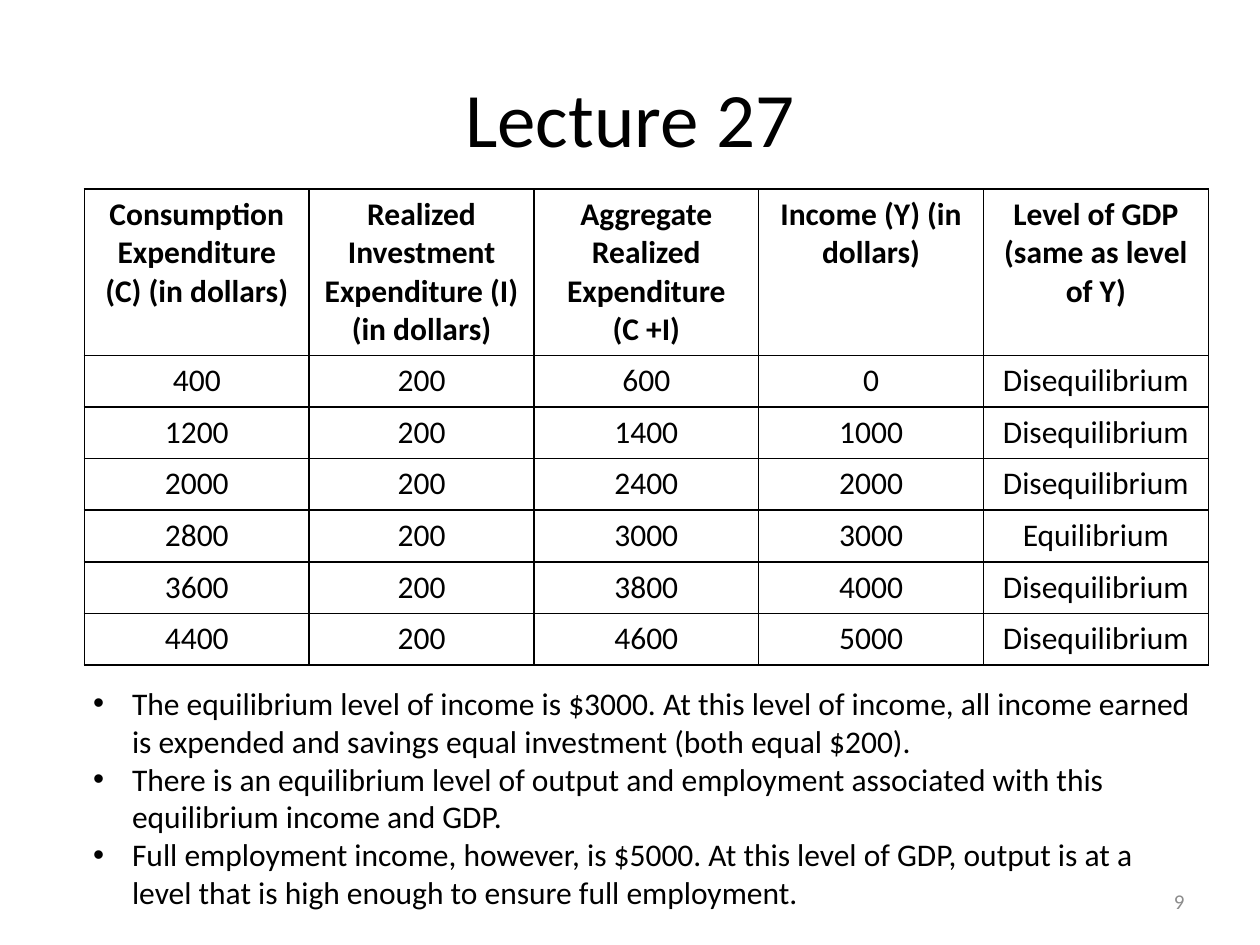
from lxml import etree
from pptx import Presentation
from pptx.dml.color import RGBColor
from pptx.enum.text import MSO_ANCHOR, PP_ALIGN
from pptx.oxml.ns import qn
from pptx.util import Inches, Pt

LEFT, CENTER, RIGHT = PP_ALIGN.LEFT, PP_ALIGN.CENTER, PP_ALIGN.RIGHT
TOP, MIDDLE = MSO_ANCHOR.TOP, MSO_ANCHOR.MIDDLE
BLACK, GRAY = "000000", "8C8C8C"

HEADS = [
    ["Consumption Expenditure (C) (in dollars)"],
    ["Realized Investment Expenditure (I) (in dollars)"],
    ["Aggregate Realized Expenditure", "(C +I)"],
    ["Income (Y) (in dollars)"],
    ["Level of GDP (same as level of Y)"],
]
# Consumption, realized investment, aggregate expenditure, income
LEVELS = [
    (400, 200, 600, 0),
    (1200, 200, 1400, 1000),
    (2000, 200, 2400, 2000),
    (2800, 200, 3000, 3000),
    (3600, 200, 3800, 4000),
    (4400, 200, 4600, 5000),
]
NOTES = [
    "The equilibrium level of income is $3000. At this level of income, all "
    "income earned is expended and savings equal investment (both equal $200).",
    "There is an equilibrium level of output and employment associated with "
    "this equilibrium income and GDP.",
    "Full employment income, however, is $5000. At this level of GDP, output "
    "is at a level that is high enough to ensure full employment.",
]


def color(code):
    return RGBColor.from_string(code)


def border(cell, code=BLACK, width=1):
    """Draw a solid line on all four sides; call before setting the fill."""
    props = cell._tc.get_or_add_tcPr()
    for side in ("lnL", "lnR", "lnT", "lnB"):
        line = etree.SubElement(props, qn(f"a:{side}"), w=str(Pt(width)))
        fill = etree.SubElement(line, qn("a:solidFill"))
        etree.SubElement(fill, qn("a:srgbClr"), val=code)


def bullet(para, indent):
    props = para._p.get_or_add_pPr()
    props.set("marL", str(Inches(indent)))
    props.set("indent", str(Inches(-indent)))
    etree.SubElement(props, qn("a:buFont"), typeface="Arial")
    etree.SubElement(props, qn("a:buChar"), char="•")


class Page:
    """The current slide and its text style."""

    font = "Calibri"

    def __init__(self, slide):
        self.slide = slide

    def fill_text(self, frame, lines, size, code=BLACK, align=LEFT,
                  bold=False):
        frame.word_wrap = True
        for i, line in enumerate(lines):
            para = frame.add_paragraph() if i else frame.paragraphs[0]
            para.alignment = align
            run = para.add_run()
            run.text = line
            run.font.name = self.font
            run.font.size = Pt(size)
            run.font.bold = bold
            run.font.color.rgb = color(code)

    def text(self, box, lines, size, code=BLACK, align=LEFT, anchor=TOP):
        frame = self.slide.shapes.add_textbox(*map(Inches, box)).text_frame
        frame.vertical_anchor = anchor
        self.fill_text(frame, lines, size, code, align)
        return frame

    def bullets(self, box, lines, size, indent):
        for para in self.text(box, lines, size).paragraphs:
            bullet(para, indent)

    def table(self, box, rows, heights, size):
        """Add a table whose first row is bold; a cell is a list of lines."""
        shape = self.slide.shapes.add_table(
            len(rows), len(rows[0]), *map(Inches, box))
        grid = shape.table
        grid.first_row = grid.horz_banding = False
        for r, (row, height) in enumerate(zip(rows, heights)):
            grid.rows[r].height = Inches(height)
            for c, lines in enumerate(row):
                cell = grid.cell(r, c)
                border(cell)
                cell.fill.background()
                self.fill_text(cell.text_frame, lines, size,
                               align=CENTER, bold=r == 0)


def main():
    deck = Presentation()
    deck.slide_width, deck.slide_height = Inches(10), Inches(7.5)
    page = Page(deck.slides.add_slide(deck.slide_layouts[6]))

    page.text((0.5, 0.3, 9, 1.25), ["Lecture 27"], 44,
              align=CENTER, anchor=MIDDLE)

    rows = [HEADS]
    for level in LEVELS:
        spent, income = level[2:]
        state = "Equilibrium" if spent == income else "Disequilibrium"
        rows.append([[str(value)] for value in level] + [[state]])
    page.table((0.67, 1.5, 8.92, 3.7), rows,
               [1.32] + [0.41] * len(LEVELS), 18)

    page.bullets((0.64, 5.38, 8.94, 1.92), NOTES, 18, 0.31)
    page.text((7.17, 6.95, 2.33, 0.4), ["9"], 12, GRAY, RIGHT, MIDDLE)
    deck.save("out.pptx")


if __name__ == "__main__":
    main()
